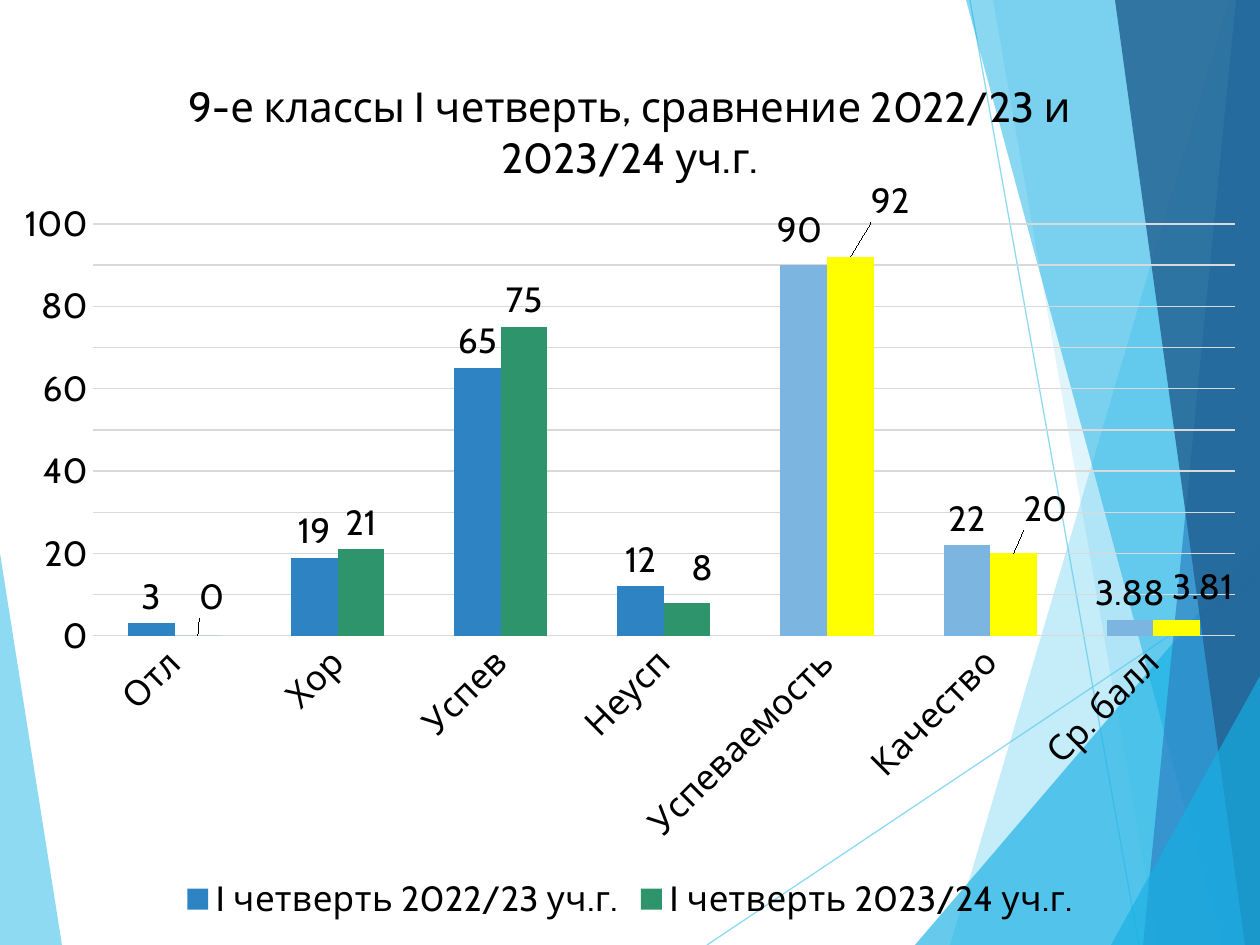
"""Build a slide comparing first-quarter results of the ninth grades over two school years."""
from lxml import etree
from pptx import Presentation, util as u
from pptx.chart.data import CategoryChartData
from pptx.dml.color import RGBColor
from pptx.enum import chart as ch, shapes
from pptx.oxml.ns import qn

PX = u.Inches(1) / 126
WIDTH, HEIGHT = 1260, 945
THEME = {
    "font": "Cabin", "text": "000000", "grid": "D9D9D9",
    "sky": "5FCBEF", "cyan": "17B0E4", "blue": "2E83C3", "navy": "226292",
    "green": "2E946B", "pale": "7CB5E0", "yellow": "FFFF00",
    "title_size": 24, "body_size": 20, "hairline": 0.75,
}

LEFT_FACET = ("sky", 70, [(0, 553), (62, 945), (0, 945)])
RAYS = [((707, 945), (1260, 575)), ((970, 0), (1139, 945))]
RIGHT_FACETS = [
    ("sky", 36, [(1229, 0), (950, 945), (1260, 945), (1260, 0)]),
    ("sky", 20, [(993, 0), (1158, 945), (1260, 945), (1260, 0)]),
    ("cyan", 66, [(915, 945), (1260, 541), (1260, 945)]),
    ("cyan", 50, [(966, 0), (1222, 945), (1260, 945), (1260, 0)]),
    ("blue", 70, [(1236, 0), (1143, 945), (1260, 945), (1260, 0)]),
    ("navy", 82, [(1115, 0), (1245, 945), (1260, 945), (1260, 0)]),
    ("cyan", 66, [(1111, 945), (1260, 676), (1260, 945)]),
]

TITLE = "9-е классы I четверть, сравнение 2022/23 и 2023/24 уч.г."
CATEGORIES = ["Отл", "Хор", "Успев", "Неусп", "Успеваемость", "Качество", "Ср. балл"]
RATE_POINTS = (4, 5, 6)
SERIES = [
    {"name": "I четверть 2022/23 уч.г.", "values": [3, 19, 65, 12, 90, 22, 3.88],
     "color": "blue", "rate_color": "pale", "label_shifts": {4: (-4, -9)}},
    {"name": "I четверть 2023/24 уч.г.", "values": [0, 21, 75, 8, 92, 20, 3.81],
     "color": "green", "rate_color": "yellow",
     "label_shifts": {0: (14, -12), 3: (15, -8), 4: (40, -29), 5: (32, -18), 6: (26, -7)}},
]
CHART_BOX = (0, 45, 1260, 883)
PLOT_BOX = (93, 224, 1142, 412)


def px(value):
    return u.Emu(round(value * PX))


def color(name):
    return RGBColor.from_string(THEME[name])


def set_values(target, values):
    for name, value in values.items():
        setattr(target, name, value)


def set_font(font, size="body_size"):
    set_values(font, {"name": THEME["font"], "size": u.Pt(THEME[size]), "bold": False})
    font.color.rgb = color("text")


def set_alpha(shape, percent):
    for node in shape._element.spPr.iter(qn("a:srgbClr")):
        etree.SubElement(node, qn("a:alpha"), val=str(percent * 1000))


def add_facet(slide, name, percent, points):
    builder = slide.shapes.build_freeform(*points[0], scale=PX)
    builder.add_line_segments(points[1:], close=True)
    shape = builder.convert_to_shape()
    shape.shadow.inherit = False
    shape.fill.solid()
    shape.fill.fore_color.rgb = color(name)
    shape.line.fill.background()
    set_alpha(shape, percent)


def add_ray(slide, start, end):
    ray = slide.shapes.add_connector(
        shapes.MSO_CONNECTOR.STRAIGHT, *map(px, start + end))
    ray.line.color.rgb = color("sky")
    ray.line.width = u.Pt(THEME["hairline"])
    set_alpha(ray, 70)
    etree.SubElement(ray._element.spPr, qn("a:effectLst"))


def manual_layout(values):
    layout = etree.Element(qn("c:layout"))
    manual = etree.SubElement(layout, qn("c:manualLayout"))
    for name, value in values.items():
        etree.SubElement(manual, qn(f"c:{name}"), val=str(value))
    return layout


def place_plot(chart):
    left, top, width, height = CHART_BOX
    x, y, w, h = PLOT_BOX
    area = chart._chartSpace.chart.plotArea
    for old in area.findall(qn("c:layout")):
        area.remove(old)
    area.insert(0, manual_layout({
        "layoutTarget": "inner", "xMode": "edge", "yMode": "edge",
        "x": (x - left) / width, "y": (y - top) / height,
        "w": w / width, "h": h / height}))


def style_series(series, data):
    series.format.fill.solid()
    series.format.fill.fore_color.rgb = color(data["color"])
    series.invert_if_negative = False
    for index in RATE_POINTS:
        fill = series.points[index].format.fill
        fill.solid()
        fill.fore_color.rgb = color(data["rate_color"])
    labels = series.data_labels
    set_values(labels, {"show_value": True, "position": ch.XL_LABEL_POSITION.OUTSIDE_END})
    set_font(labels.font)
    for index, (dx, dy) in data["label_shifts"].items():
        label = series.points[index].data_label
        set_font(label.font)
        label.position = ch.XL_LABEL_POSITION.OUTSIDE_END
        node = series._element.xpath(f"c:dLbls/c:dLbl/c:idx[@val='{index}']")[0]
        node.addnext(manual_layout({"x": dx / CHART_BOX[2], "y": dy / CHART_BOX[3]}))


def style_axes(chart):
    for axis in (chart.category_axis, chart.value_axis):
        set_values(axis, {"major_tick_mark": ch.XL_TICK_MARK.NONE,
                          "minor_tick_mark": ch.XL_TICK_MARK.NONE})
        axis.format.line.fill.background()
        set_font(axis.tick_labels.font)
    chart.category_axis._element.find(qn("c:txPr")).find(qn("a:bodyPr")).set("rot", "-2700000")
    set_values(chart.value_axis, {"minimum_scale": 0, "maximum_scale": 100,
                                  "major_unit": 10, "has_major_gridlines": True})
    grid = chart.value_axis.major_gridlines.format.line
    grid.color.rgb = color("grid")
    grid.width = u.Pt(THEME["hairline"])


def add_results_chart(slide):
    data = CategoryChartData()
    data.categories = CATEGORIES
    for item in SERIES:
        data.add_series(item["name"], item["values"])
    chart = slide.shapes.add_chart(
        ch.XL_CHART_TYPE.COLUMN_CLUSTERED, *map(px, CHART_BOX), data).chart
    set_font(chart.font)
    set_values(chart, {"has_title": True, "has_legend": True})
    chart.chart_title.text_frame.text = TITLE
    set_font(chart.chart_title.text_frame.paragraphs[0].runs[0].font, "title_size")
    set_values(chart.legend, {"position": ch.XL_LEGEND_POSITION.BOTTOM,
                              "include_in_layout": False})
    set_font(chart.legend.font)
    set_values(chart.plots[0], {"gap_width": 150, "overlap": 0, "vary_by_categories": False})
    style_axes(chart)
    for series, item in zip(chart.plots[0].series, SERIES):
        style_series(series, item)
    place_plot(chart)


def main():
    presentation = Presentation()
    set_values(presentation, {"slide_width": px(WIDTH), "slide_height": px(HEIGHT)})
    slide = presentation.slides.add_slide(presentation.slide_layouts[6])
    add_facet(slide, *LEFT_FACET)
    for start, end in RAYS:
        add_ray(slide, start, end)
    for facet in RIGHT_FACETS:
        add_facet(slide, *facet)
    add_results_chart(slide)
    presentation.save("out.pptx")


if __name__ == "__main__":
    main()
